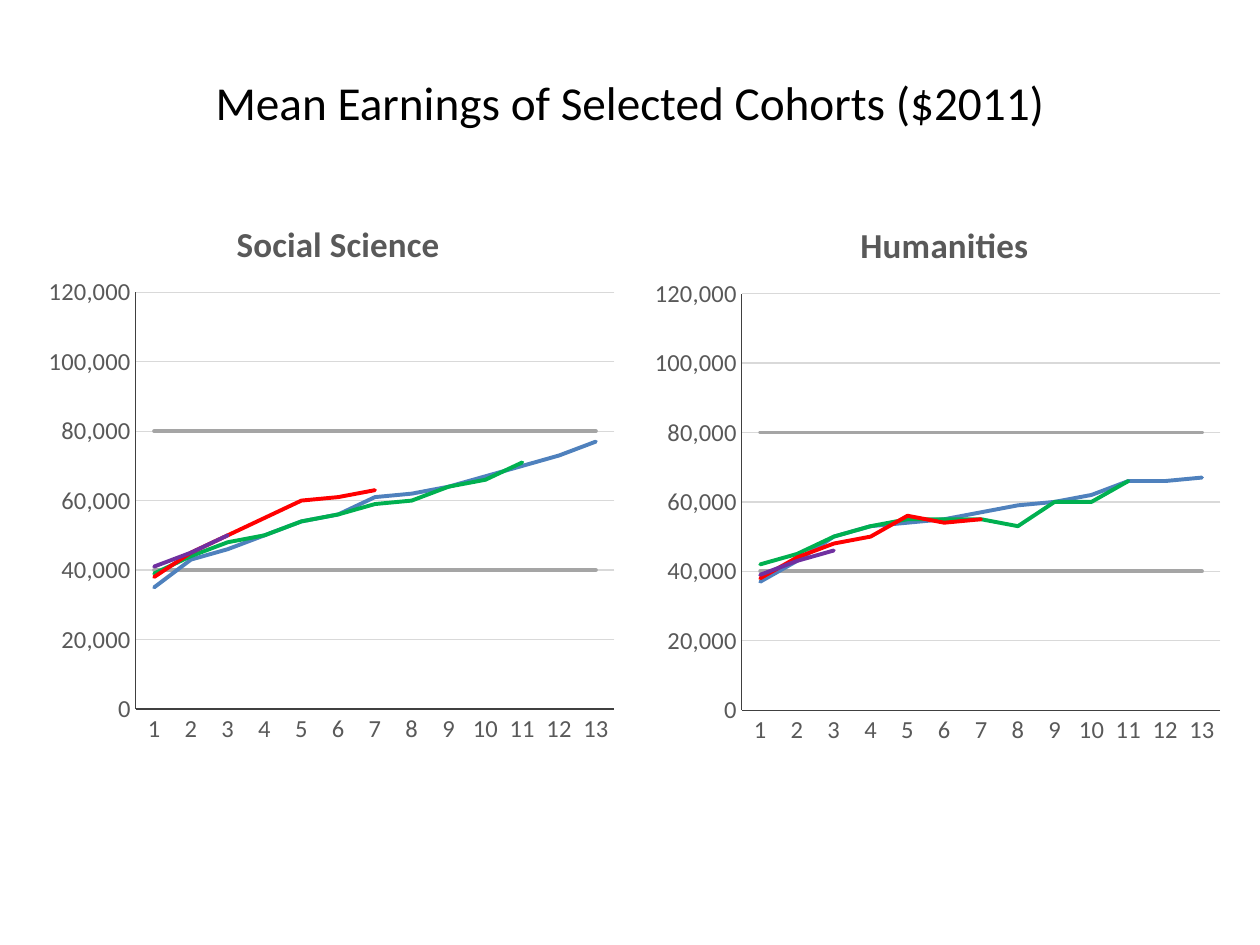
from lxml import etree
from pptx import Presentation
from pptx import util as u
from pptx.chart.data import CategoryChartData
from pptx.dml.color import RGBColor
from pptx.enum import chart as charts, text
from pptx.oxml.ns import qn

BLACK = RGBColor(0x00, 0x00, 0x00)
TEXT_GRAY = RGBColor(0x59, 0x59, 0x59)
AXIS_GRAY = RGBColor(0x40, 0x40, 0x40)
GRID_GRAY = RGBColor(0xD9, 0xD9, 0xD9)
REFERENCE_GRAY = RGBColor(0xA5, 0xA5, 0xA5)
BLUE = RGBColor(0x4F, 0x81, 0xBD)
GREEN = RGBColor(0x00, 0xB0, 0x50)
RED = RGBColor(0xFF, 0x00, 0x00)
PURPLE = RGBColor(0x70, 0x30, 0xA0)
SERIES_COLORS = [REFERENCE_GRAY, REFERENCE_GRAY, BLUE, GREEN, RED, PURPLE]

FONT = "Calibri"
TITLE = "Mean Earnings of Selected Cohorts ($2011)"
YEARS = 13
PANELS = [
    {
        "title": "Social Science",
        "title_left": 0.33,
        "references": [40, 80],
        "cohorts": [
            [35, 43, 46, 50, 54, 56, 61, 62, 64, 67, 70, 73, 77],
            [39, 44, 48, 50, 54, 56, 59, 60, 64, 66, 71],
            [38, 45, 50, 55, 60, 61, 63],
            [41, 45, 50],
        ],
    },
    {
        "title": "Humanities",
        "title_left": 0.36,
        "references": [80, 40],
        "cohorts": [
            [37, 43, 50, 53, 54, 55, 57, 59, 60, 62, 66, 66, 67],
            [42, 45, 50, 53, 55, 55, 55, 53, 60, 60, 66],
            [38, 44, 48, 50, 56, 54, 55],
            [39, 43, 46],
        ],
    },
]

CHART_LEFT, CHART_TOP = 0.28, 1.46
CHART_WIDTH, CHART_HEIGHT = 4.69, 4.53
COLUMN_STEP, ROW_STEP = 4.81, 0.01


def style_font(font, size, color, bold=False):
    font.name = FONT
    font.size = u.Pt(size)
    font.bold = bold
    font.color.rgb = color


def style_line(line, color, width):
    line.color.rgb = color
    line.width = u.Pt(width)


def set_layout(element, index, settings):
    for layout in element.findall(qn("c:layout")):
        element.remove(layout)
    layout = etree.Element(qn("c:layout"))
    manual = etree.SubElement(layout, qn("c:manualLayout"))
    for name, value in settings.items():
        etree.SubElement(manual, qn(f"c:{name}")).set("val", str(value))
    element.insert(index, layout)


def chart_data(panel):
    data = CategoryChartData(number_format="#,##0")
    data.categories = [str(year) for year in range(1, YEARS + 1)]
    rows = [[value] * YEARS for value in panel["references"]] + panel["cohorts"]
    for number, row in enumerate(rows, 1):
        values = [value * 1000 for value in row] + [None] * (YEARS - len(row))
        data.add_series(f"Series {number}", values)
    return data


def style_axes(chart):
    for axis in (chart.category_axis, chart.value_axis):
        axis.major_tick_mark = axis.minor_tick_mark = charts.XL_TICK_MARK.NONE
        style_font(axis.tick_labels.font, 14, TEXT_GRAY)
        style_line(axis.format.line, AXIS_GRAY, 0.75)
    chart.category_axis.has_major_gridlines = False
    axis = chart.value_axis
    axis.minimum_scale, axis.maximum_scale, axis.major_unit = 0, 120000, 20000
    axis.tick_labels.number_format = "#,##0"
    axis.tick_labels.number_format_is_linked = False
    axis.has_major_gridlines = True
    style_line(axis.major_gridlines.format.line, GRID_GRAY, 0.75)


def add_panel(slide, column, panel):
    frame = slide.shapes.add_chart(
        charts.XL_CHART_TYPE.LINE,
        u.Inches(CHART_LEFT + column * COLUMN_STEP),
        u.Inches(CHART_TOP + column * ROW_STEP),
        u.Inches(CHART_WIDTH), u.Inches(CHART_HEIGHT), chart_data(panel))
    chart = frame.chart
    style_font(chart.font, 10, BLACK)
    chart.has_legend = False
    chart.has_title = True
    run = chart.chart_title.text_frame.paragraphs[0].add_run()
    run.text = panel["title"]
    style_font(run.font, 20, TEXT_GRAY, bold=True)
    style_axes(chart)

    plot = chart.plots[0]
    plot.vary_by_categories = False
    for series, color in zip(plot.series, SERIES_COLORS):
        series.smooth = False
        series.marker.style = charts.XL_MARKER_STYLE.NONE
        style_line(series.format.line, color, 2.25)
        series.format.line.fill.solid()
        series.format.line.color.rgb = color
        series._element.find(f"{qn('c:spPr')}/{qn('a:ln')}").set("cap", "rnd")

    chart_element = chart._chartSpace.find(qn("c:chart"))
    edges = {"xMode": "edge", "yMode": "edge"}
    set_layout(chart_element.find(qn("c:title")), 1,
               {**edges, "x": panel["title_left"], "y": 0.05})
    set_layout(chart_element.find(qn("c:plotArea")), 0,
               {"layoutTarget": "inner", **edges,
                "x": 0.17, "y": 0.19, "w": 0.81, "h": 0.73})


def add_title(slide):
    title = slide.shapes.title
    title.left, title.top = u.Inches(0.69), u.Inches(0.34)
    title.width, title.height = u.Inches(8.62), u.Inches(0.57)
    frame = title.text_frame
    frame.auto_size = text.MSO_AUTO_SIZE.NONE
    frame.word_wrap = True
    frame.vertical_anchor = text.MSO_ANCHOR.TOP
    frame.margin_top, frame.margin_bottom = u.Inches(0.29), 0
    paragraph = frame.paragraphs[0]
    paragraph.alignment = text.PP_ALIGN.CENTER
    paragraph.line_spacing = 0.9
    run = paragraph.add_run()
    run.text = TITLE
    style_font(run.font, 27, BLACK)


def main():
    presentation = Presentation()
    presentation.slide_width = u.Inches(10)
    presentation.slide_height = u.Inches(7.5)
    slide = presentation.slides.add_slide(presentation.slide_layouts[5])
    add_title(slide)
    for column, panel in enumerate(PANELS):
        add_panel(slide, column, panel)
    presentation.save("out.pptx")


if __name__ == "__main__":
    main()
